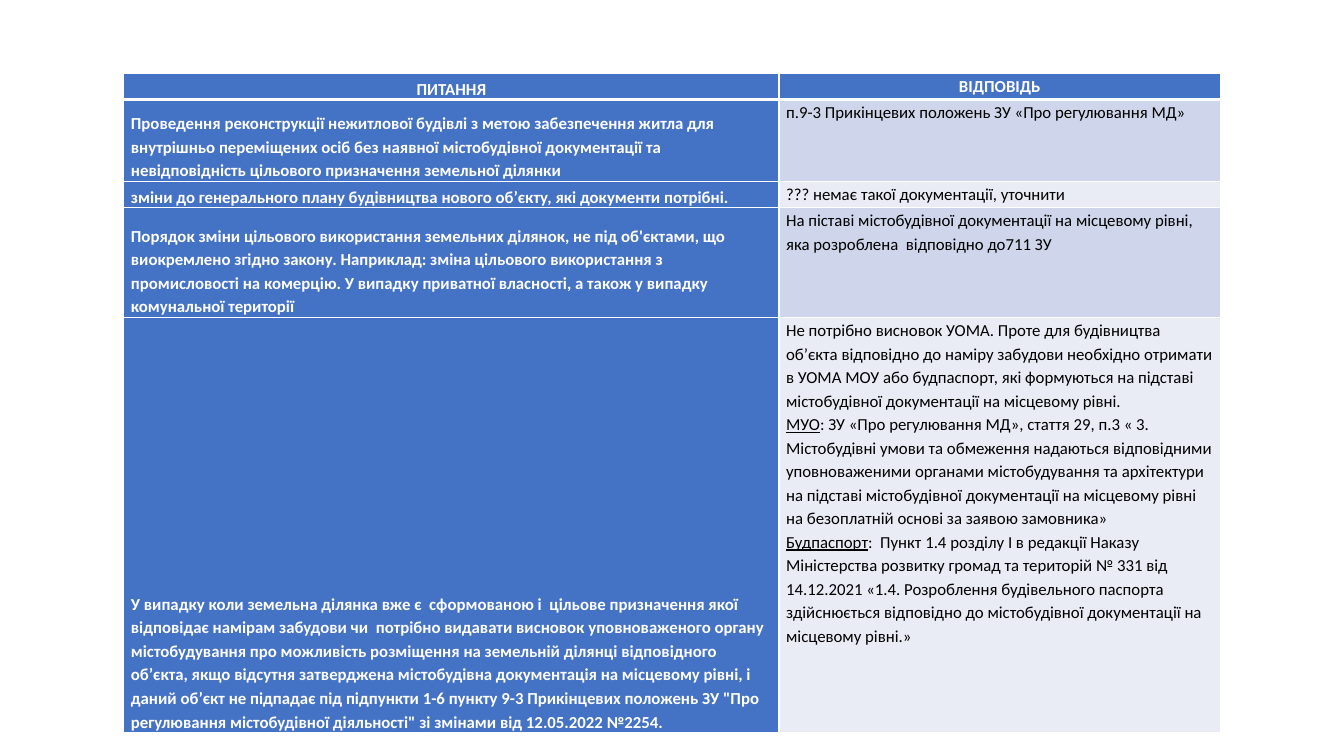
"""Builds a question and answer table slide on urban planning rules."""
from pptx import Presentation
from pptx import util as u
from pptx.dml.color import RGBColor
from pptx.enum import text
from pptx.oxml import parse_xml
from pptx.oxml.ns import nsdecls

BLUE, WHITE, BLACK = "4472C4", "FFFFFF", "000000"
BANDS = ("CFD5EA", "E9EBF5")
COLUMNS = (16.51, 11.13)
ROWS = (0.66, 2.06, 0.66, 2.77, 10.46)
HEADERS = ("ПИТАННЯ", "ВІДПОВІДЬ")

QA = [
    ("Проведення реконструкції нежитлової будівлі з метою забезпечення житла для внутрішньо "
     "переміщених осіб без наявної містобудівної документації та невідповідність цільового "
     "призначення земельної ділянки",
     [("", "п.9-3 Прикінцевих положень ЗУ «Про регулювання МД»")]),
    ("зміни до генерального плану будівництва нового об’єкту, які документи потрібні.",
     [("", "??? немає такої документації, уточнити")]),
    ("Порядок зміни цільового використання земельних ділянок, не під об'єктами, що виокремлено "
     "згідно закону. Наприклад: зміна цільового використання з промисловості на комерцію. "
     "У випадку приватної власності, а також у випадку комунальної території",
     [("", "На піставі містобудівної документації на місцевому рівні, яка розроблена  "
       "відповідно до711 ЗУ")]),
    ("У випадку коли земельна ділянка вже є  сформованою і  цільове призначення якої відповідає "
     "намірам забудови чи  потрібно видавати висновок уповноваженого органу містобудування про "
     "можливість розміщення на земельній ділянці відповідного об’єкта, якщо відсутня затверджена "
     "містобудівна документація на місцевому рівні, і даний об’єкт не підпадає під підпункти 1-6 "
     "пункту 9-3 Прикінцевих положень ЗУ \"Про регулювання містобудівної діяльності\" зі змінами "
     "від 12.05.2022 №2254.",
     [("", "Не потрібно висновок УОМА. Проте для будівництва об’єкта відповідно до наміру "
       "забудови необхідно отримати в УОМА МОУ або будпаспорт, які формуються на підставі  "
       "містобудівної документації на місцевому рівні."),
      ("МУО", ": ЗУ «Про регулювання МД», стаття 29, п.3 « 3. Містобудівні умови та обмеження "
       "надаються відповідними уповноваженими органами містобудування та архітектури на підставі "
       "містобудівної документації на місцевому рівні на безоплатній основі за заявою замовника»"),
      ("Будпаспорт", ":  Пункт 1.4 розділу I в редакції Наказу Міністерства розвитку громад та "
       "територій № 331 від 14.12.2021 «1.4. Розроблення будівельного паспорта здійснюється "
       "відповідно до містобудівної документації на місцевому рівні.»")]),
]


def rgb(value):
    """Turn a hex string into a colour."""
    return RGBColor.from_string(value)


class Deck:
    """Holds the text style and the current slide."""

    def __init__(self, prs, font="Calibri", size=12):
        """Add a blank slide and keep the style."""
        self.s = prs.slides.add_slide(prs.slide_layouts[6])
        self.font, self.size = font, size

    def table(self, left, top, columns, rows):
        """Add a table with the given column widths and row heights."""
        sp = self.s.shapes.add_table(len(rows), len(columns), u.Cm(left), u.Cm(top),
                                     u.Cm(sum(columns)), u.Cm(sum(rows)))
        for column, width in zip(sp.table.columns, columns):
            column.width = u.Cm(width)
        for row, height in zip(sp.table.rows, rows):
            row.height = u.Cm(height)
        return sp.table

    def borders(self, cell, top, bottom):
        """Draw white borders around a cell."""
        tc_pr = cell._tc.get_or_add_tcPr()
        for side, width in (("L", 1), ("R", 1), ("T", top), ("B", bottom)):
            tc_pr.append(parse_xml(
                f'<a:ln{side} {nsdecls("a")} w="{u.Pt(width)}"><a:solidFill>'
                f'<a:srgbClr val="{WHITE}"/></a:solidFill></a:ln{side}>'))

    def cell(self, cell, paragraphs, fill, color, bold=False, bottom=False, center=False):
        """Fill a cell with paragraphs, each an underlined lead and its rest."""
        cell.fill.solid()
        cell.fill.fore_color.rgb = rgb(fill)
        cell.margin_left = cell.margin_right = u.Cm(0.18)
        cell.margin_top = cell.margin_bottom = 0
        cell.vertical_anchor = text.MSO_ANCHOR.BOTTOM if bottom else text.MSO_ANCHOR.TOP
        tf = cell.text_frame
        for i, (lead, rest) in enumerate(paragraphs):
            p = tf.add_paragraph() if i else tf.paragraphs[0]
            p.line_spacing = 1.15
            p.alignment = text.PP_ALIGN.CENTER if center else text.PP_ALIGN.LEFT
            for part in filter(None, (lead, rest)):
                r = p.add_run()
                r.text = part
                r.font.name, r.font.size = self.font, u.Pt(self.size)
                r.font.bold, r.font.underline = bold, part == lead
                r.font.color.rgb = rgb(color)


def main():
    """Build and save the slide."""
    prs = Presentation()
    prs.slide_width, prs.slide_height = u.Cm(33.87), u.Cm(19.05)
    deck = Deck(prs)
    table = deck.table(3.12, 1.85, COLUMNS, ROWS)
    for row in range(len(ROWS)):
        for column in range(len(COLUMNS)):
            deck.borders(table.cell(row, column), 3 if row == 1 else 1, 3 if row == 0 else 1)
    for column, header in enumerate(HEADERS):
        deck.cell(table.cell(0, column), [("", header)], BLUE, WHITE, bold=True,
                  bottom=column == 0, center=True)
    for row, (question, answer) in enumerate(QA, 1):
        deck.cell(table.cell(row, 0), [("", question)], BLUE, WHITE, bold=True, bottom=True)
        deck.cell(table.cell(row, 1), answer, BANDS[(row - 1) % 2], BLACK)
    prs.save("out.pptx")


if __name__ == "__main__":
    main()
